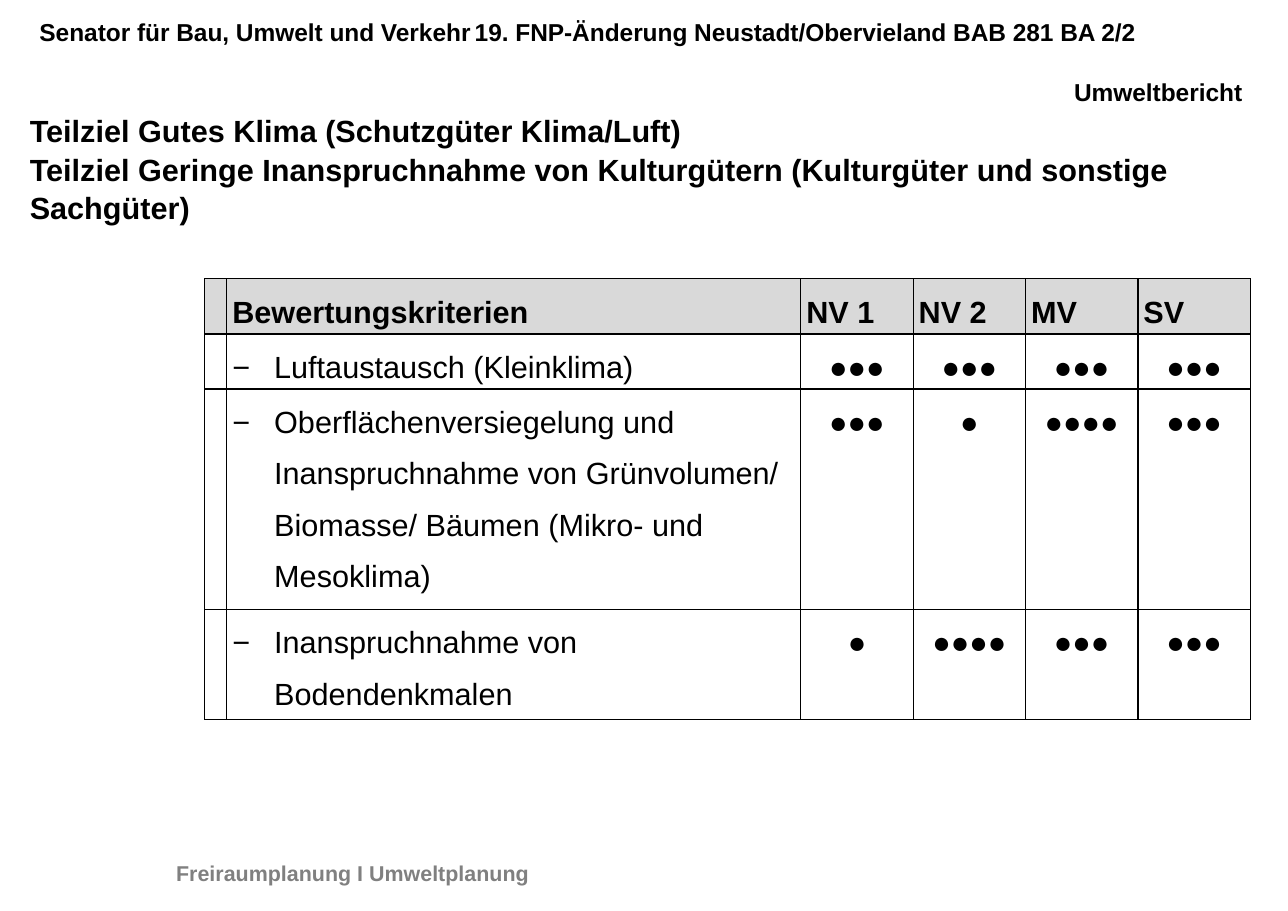
import dataclasses
import typing

import lxml.etree
import pptx
import pptx.dml.color
import pptx.enum.text
import pptx.oxml.ns
import pptx.util

ALIGN = pptx.enum.text.PP_ALIGN
SLIDE_WIDTH = pptx.util.Inches(11.69)
SLIDE_HEIGHT = pptx.util.Inches(8.27)
ROW_UNIT = pptx.util.Inches(0.5)


@dataclasses.dataclass(frozen=True)
class Theme:
    font: str = "Arial"
    ink: str = "000000"
    muted: str = "808080"
    header_fill: str = "D9D9D9"
    header_size: float = 16
    main_size: float = 20
    footer_size: float = 14
    line_spacing: float = 1.05
    table_spacing: float = 1.5
    border_width: float = 1


@dataclasses.dataclass(frozen=True)
class Area:
    """A rectangle in shares of the slide's width and height."""
    left: float
    top: float
    width: float
    height: float

    def box(self) -> tuple[int, int, int, int]:
        return (round(self.left * SLIDE_WIDTH), round(self.top * SLIDE_HEIGHT),
                round(self.width * SLIDE_WIDTH), round(self.height * SLIDE_HEIGHT))


@dataclasses.dataclass(frozen=True)
class Criterion:
    name: str
    scores: tuple[int, ...]
    row_units: int


THEME = Theme()
HEADER_AREA = Area(0.018, 0.011, 0.955, 0.11)
TITLE_AREA = Area(0.0137, 0.1137, 0.9555, 0.1354)
TABLE_AREA = Area(0.159, 0.306, 0.812, 0.484)
FOOTER_AREA = Area(0.1283, 0.938, 0.297, 0.041)

COLUMN_WIDTHS = (0.2, 5.21) + (1.02,) * 4
HEADINGS = ("", "Bewertungskriterien", "NV 1", "NV 2", "MV", "SV")
CRITERIA = (
    Criterion("Luftaustausch (Kleinklima)", (3, 3, 3, 3), 1),
    Criterion("Oberflächenversiegelung und Inanspruchnahme von Grünvolumen/ "
              "Biomasse/ Bäumen (Mikro- und Mesoklima)", (3, 1, 4, 3), 4),
    Criterion("Inanspruchnahme von Bodendenkmalen", (1, 4, 3, 3), 2),
)
TITLE_LINES = (
    "Teilziel Gutes Klima (Schutzgüter Klima/Luft)",
    "Teilziel Geringe Inanspruchnahme von Kulturgütern "
    "(Kulturgüter und sonstige Sachgüter)",
)


def add_element(parent: typing.Any, tag: str, **attributes: str) -> typing.Any:
    return lxml.etree.SubElement(parent, pptx.oxml.ns.qn(tag), attributes)


def add_run(paragraph: typing.Any, text: str, size: float,
            bold: bool = True, color: str = THEME.ink) -> None:
    run = paragraph.add_run()
    run.text = text
    run.font.name = THEME.font
    run.font.size = pptx.util.Pt(size)
    run.font.bold = bold
    run.font.color.rgb = pptx.dml.color.RGBColor.from_string(color)


def set_frame(frame: typing.Any, horizontal: float, vertical: float) -> None:
    frame.word_wrap = True
    frame.auto_size = pptx.enum.text.MSO_AUTO_SIZE.NONE
    frame.vertical_anchor = pptx.enum.text.MSO_ANCHOR.TOP
    frame.margin_left = frame.margin_right = pptx.util.Inches(horizontal)
    frame.margin_top = frame.margin_bottom = pptx.util.Inches(vertical)


def add_tab(paragraph: typing.Any, position: float, alignment: str) -> None:
    tabs = add_element(paragraph._p.get_or_add_pPr(), "a:tabLst")
    add_element(tabs, "a:tab", pos=str(pptx.util.Inches(position)), algn=alignment)


def add_dash(paragraph: typing.Any) -> None:
    properties = paragraph._p.get_or_add_pPr()
    indent = pptx.util.Inches(0.38)
    properties.set("marL", str(indent))
    properties.set("indent", str(-indent))
    add_element(properties, "a:buFont", typeface=THEME.font)
    add_element(properties, "a:buChar", char="−")
    add_tab(paragraph, 0.25, "l")


def add_header(slide: typing.Any) -> None:
    frame = slide.shapes.add_textbox(*HEADER_AREA.box()).text_frame
    set_frame(frame, 0.1, 0.05)
    first = frame.paragraphs[0]
    first.line_spacing = THEME.line_spacing
    first._p.get_or_add_pPr().set("indent", str(pptx.util.Inches(0.05)))
    add_tab(first, 10.95, "r")
    add_run(first, "Senator für Bau, Umwelt und Verkehr\t"
            "19. FNP-Änderung Neustadt/Obervieland BAB 281 BA 2/2", THEME.header_size)
    second = frame.add_paragraph()
    second.alignment = ALIGN.RIGHT
    second.line_spacing = THEME.line_spacing
    second.space_before = pptx.util.Pt(19)
    add_run(second, "Umweltbericht", THEME.header_size)


def add_title(slide: typing.Any) -> None:
    title = slide.shapes.title
    title.left, title.top, title.width, title.height = TITLE_AREA.box()
    frame = title.text_frame
    set_frame(frame, 0.11, 0.06)
    for index, line in enumerate(TITLE_LINES):
        paragraph = frame.add_paragraph() if index else frame.paragraphs[0]
        paragraph.alignment = ALIGN.LEFT
        paragraph.line_spacing = THEME.line_spacing
        add_run(paragraph, line, THEME.main_size)


def add_footer(slide: typing.Any) -> None:
    frame = slide.shapes.add_textbox(*FOOTER_AREA.box()).text_frame
    set_frame(frame, 0.1, 0.05)
    frame.word_wrap = False
    add_run(frame.paragraphs[0], "Freiraumplanung I Umweltplanung",
            THEME.footer_size, color=THEME.muted)


def style_cell(cell: typing.Any, heading: bool) -> None:
    cell.margin_left = cell.margin_right = pptx.util.Inches(0.05)
    cell.margin_top = cell.margin_bottom = 0
    properties = cell._tc.get_or_add_tcPr()
    for side in ("L", "R", "T", "B"):
        border = add_element(properties, f"a:ln{side}",
                             w=str(pptx.util.Pt(THEME.border_width)))
        add_element(add_element(border, "a:solidFill"), "a:srgbClr", val=THEME.ink)
    if heading:
        cell.fill.solid()
        cell.fill.fore_color.rgb = pptx.dml.color.RGBColor.from_string(THEME.header_fill)
    else:
        cell.fill.background()


def fill_cell(cell: typing.Any, text: str, heading: bool, column: int) -> None:
    style_cell(cell, heading)
    if not text:
        return
    paragraph = cell.text_frame.paragraphs[0]
    paragraph.line_spacing = THEME.table_spacing
    paragraph.space_after = pptx.util.Pt(4)
    if heading:
        paragraph.alignment = ALIGN.JUSTIFY
    elif column == 1:
        add_dash(paragraph)
    else:
        paragraph.alignment = ALIGN.CENTER
    add_run(paragraph, text, THEME.main_size, bold=heading)


def add_criteria_table(slide: typing.Any) -> None:
    rows = [HEADINGS] + [("", item.name, *("●" * score for score in item.scores))
                         for item in CRITERIA]
    units = [1] + [item.row_units for item in CRITERIA]
    table = slide.shapes.add_table(len(rows), len(HEADINGS), *TABLE_AREA.box()).table
    table.first_row = table.horz_banding = False
    for column, width in zip(table.columns, COLUMN_WIDTHS):
        column.width = pptx.util.Inches(width)
    for row_index, texts in enumerate(rows):
        table.rows[row_index].height = units[row_index] * ROW_UNIT
        for column_index, text in enumerate(texts):
            fill_cell(table.cell(row_index, column_index), text,
                      row_index == 0, column_index)


def main() -> None:
    presentation = pptx.Presentation()
    presentation.slide_width = SLIDE_WIDTH
    presentation.slide_height = SLIDE_HEIGHT
    slide = presentation.slides.add_slide(presentation.slide_layouts[5])
    # Page header and footer
    add_header(slide)
    add_footer(slide)
    # Ratings table and title
    add_criteria_table(slide)
    add_title(slide)
    presentation.save("out.pptx")


if __name__ == "__main__":
    main()
